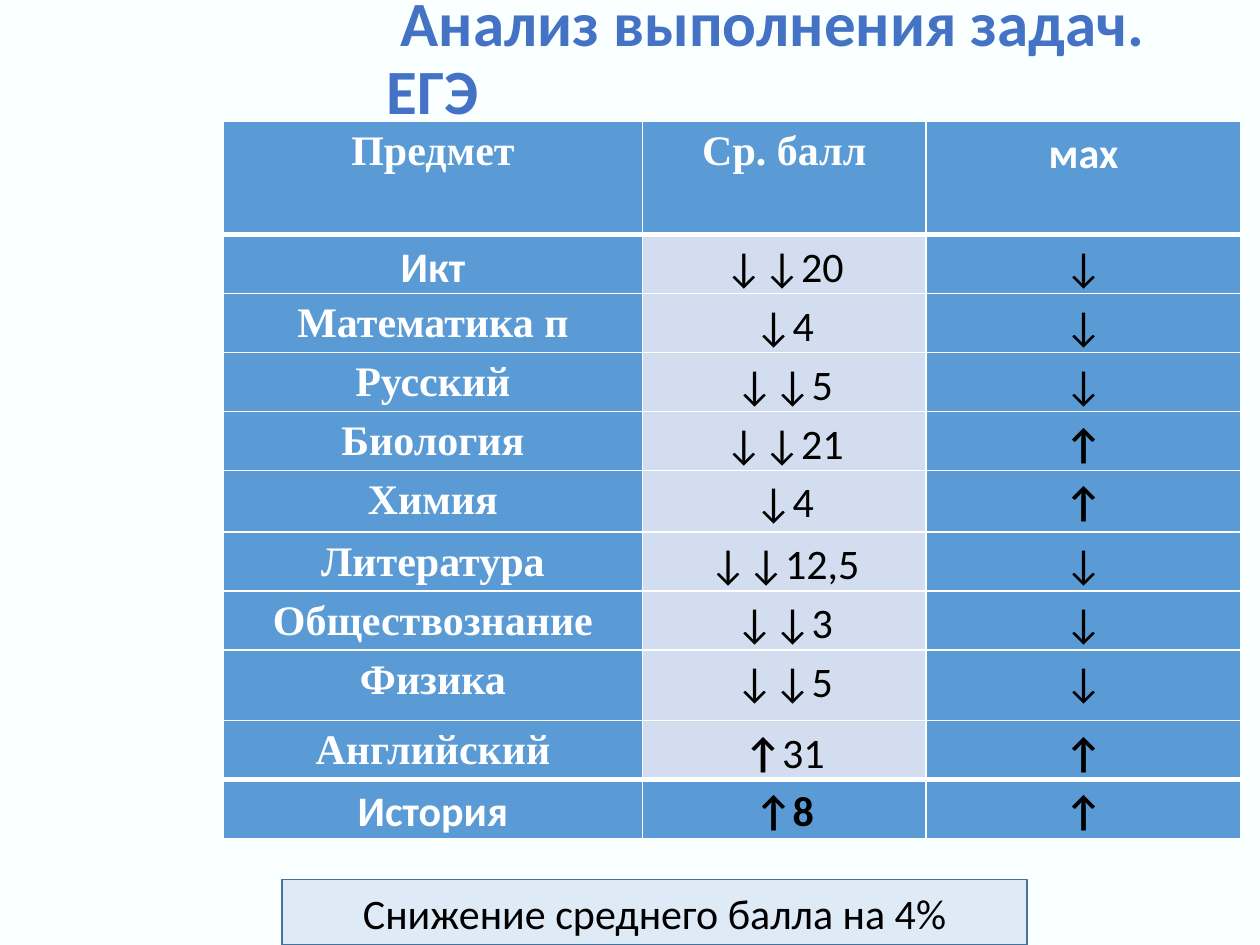
from lxml.etree import SubElement
from pptx import Presentation
from pptx.dml.color import RGBColor
from pptx.enum.shapes import MSO_SHAPE as Shape
from pptx.enum.text import MSO_ANCHOR as Anchor, MSO_AUTO_SIZE as AutoSize, PP_ALIGN as Align
from pptx.oxml.ns import qn
from pptx.util import Pt

SANS, SERIF = "Calibri", "Times New Roman"
BLUE, PALE, WHITE, BLACK = "5B9BD5", "D2DEEF", "FFFFFF", "000000"
HEADERS = [("Предмет", SERIF), ("Ср. балл", SERIF), ("мах", SANS)]
RESULTS = [
    ("Икт", "↓↓", "20", "↓"),
    ("Математика п", "↓", "4", "↓"),
    ("Русский", "↓↓", "5", "↓"),
    ("Биология", "↓↓", "21", "↑"),
    ("Химия", "↓", "4", "↑"),
    ("Литература", "↓↓", "12,5", "↓"),
    ("Обществознание", "↓↓", "3", "↓"),
    ("Физика", "↓↓", "5", "↓"),
    ("Английский", "↑", "31", "↑"),
    ("История", "↑", "8", "↑"),
]
SANS_SUBJECTS = {"Икт", "История"}
COLUMN_WIDTHS = [239.6, 162, 180]
ROW_HEIGHT = 31.7
SPECIAL_HEIGHTS = {0: 64.8, 5: 35.3, 8: 40.3}


def color(value):
    return RGBColor.from_string(value)


def fill(item, value):
    item.fill.solid()
    item.fill.fore_color.rgb = color(value)


def style(font, size, name, value, bold=False):
    font.size, font.name, font.bold = Pt(size), name, bold
    font.color.rgb = color(value)


def place(shape, box):
    shape.left, shape.top, shape.width, shape.height = (Pt(length) for length in box)


def add_title(page, box):
    title = page.shapes.title
    place(title, box)
    frame = title.text_frame
    frame.word_wrap = True
    frame.auto_size = AutoSize.NONE
    frame.vertical_anchor = Anchor.MIDDLE
    frame.margin_right = Pt(20)
    para = frame.paragraphs[0]
    para.text = "Анализ выполнения задач. ЕГЭ"
    para.alignment = Align.LEFT
    para.line_spacing = 0.9
    para._p.get_or_add_pPr().set("indent", str(Pt(8)))
    style(para.font, 36, SANS, "4472C4", True)


def add_borders(cell, top, bottom):
    properties = cell._tc.get_or_add_tcPr()
    for side, width in (("L", 1), ("R", 1), ("T", top), ("B", bottom)):
        line = SubElement(properties, qn(f"a:ln{side}"), w=str(Pt(width)))
        solid = SubElement(line, qn("a:solidFill"))
        SubElement(solid, qn("a:srgbClr"), val=WHITE)


def write_cell(cell, spans, font_name, value, background, top, bottom):
    add_borders(cell, top, bottom)
    fill(cell, background)
    cell.margin_left = cell.margin_right = Pt(5)
    cell.margin_top = cell.margin_bottom = 0
    para = cell.text_frame.paragraphs[0]
    para.alignment = Align.CENTER
    para.line_spacing = 1.15
    style(para.font, 24, font_name, value, spans[0][1])
    for text, bold in spans:
        span = para.add_run()
        span.text = text
        if bold != spans[0][1]:
            span.font.bold = bold


def result_cells(subject, arrows, score, best, is_last):
    subject_font = SANS if subject in SANS_SUBJECTS else SERIF
    rising = arrows == "↑"
    if rising and not is_last:
        spans = [(arrows, True), (score, False)]
    else:
        spans = [(arrows + score, is_last)]
    return [
        ([(subject, True)], subject_font, WHITE, BLUE),
        (spans, SANS, BLACK, BLUE if is_last else PALE),
        ([(best, best == "↑")], SANS, BLACK, BLUE),
    ]


def add_results(page, box):
    rows = [[([(text, True)], name, WHITE, BLUE) for text, name in HEADERS]]
    last = len(RESULTS)
    for number, result in enumerate(RESULTS, 1):
        rows.append(result_cells(*result, number == last))
    lengths = [Pt(length) for length in box]
    table = page.shapes.add_table(len(rows), len(HEADERS), *lengths).table
    for column, width in zip(table.columns, COLUMN_WIDTHS):
        column.width = Pt(width)
    for number, cells in enumerate(rows):
        table.rows[number].height = Pt(SPECIAL_HEIGHTS.get(number, ROW_HEIGHT))
        top = 3 if number in (1, last) else 1
        bottom = 3 if number in (0, last - 1) else 1
        for column, cell in enumerate(cells):
            write_cell(table.cell(number, column), *cell, top, bottom)


def add_summary(page, box):
    summary = page.shapes.add_shape(Shape.RECTANGLE, *(Pt(length) for length in box))
    summary.shadow.inherit = False
    fill(summary, "DEEBF7")
    summary.line.color.rgb = color("43739E")
    summary.line.width = Pt(1)
    frame = summary.text_frame
    frame.word_wrap = True
    frame.vertical_anchor = Anchor.MIDDLE
    para = frame.paragraphs[0]
    para.text = "Снижение среднего балла на 4%"
    para.alignment = Align.CENTER
    style(para.font, 24, SANS, BLACK)


def main():
    deck = Presentation()
    deck.slide_width, deck.slide_height = Pt(720), Pt(540)
    page = deck.slides.add_slide(deck.slide_layouts[5])
    fill(page.background, "FAFFFF")
    add_title(page, (213.8, -0.7, 507.6, 69.8))
    add_results(page, (127.6, 69.3, sum(COLUMN_WIDTHS), 406.8))
    add_summary(page, (161.3, 502.5, 425.5, 37.5))
    deck.save("out.pptx")


if __name__ == "__main__":
    main()
